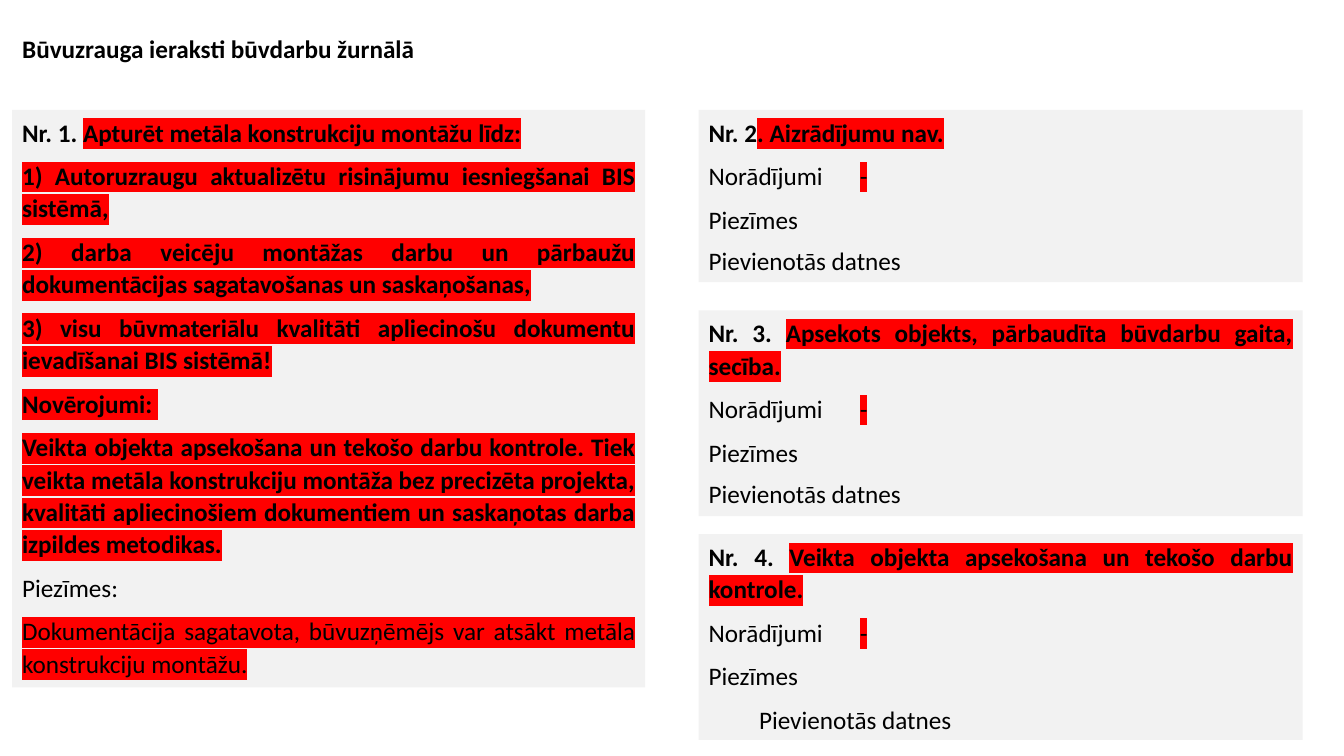
from dataclasses import dataclass

from lxml.etree import SubElement
from pptx import Presentation
from pptx.dml.color import RGBColor
from pptx.enum.shapes import MSO_SHAPE
from pptx.enum.text import MSO_ANCHOR, MSO_AUTO_SIZE, PP_ALIGN
from pptx.oxml.ns import qn
from pptx.slide import Slide
from pptx.text.text import TextFrame
from pptx.util import Inches, Pt


@dataclass(frozen=True)
class Theme:
    font: str = "Calibri"
    size: int = 18
    text: str = "000000"
    panel: str = "F2F2F2"
    marker: str = "FF0000"
    line_spacing: float = 1.07
    space_after: int = 8


@dataclass(frozen=True)
class Span:
    text: str
    bold: bool = False
    marked: bool = False


@dataclass(frozen=True)
class Line:
    spans: tuple[Span, ...]
    align: PP_ALIGN = PP_ALIGN.JUSTIFY
    spaced: bool = True
    indent: float = 0


@dataclass(frozen=True)
class Entry:
    left: float
    top: float
    width: float
    height: float
    lines: tuple[Line, ...]


THEME = Theme()
RIGHT_LEFT, RIGHT_WIDTH = 6.93, 5.99


def marked_line(text: str, bold: bool = True) -> Line:
    return Line((Span(text, bold, True),))


def heading(number: str, remark: str) -> Line:
    return Line((Span(number, True), Span(remark, True, True)))


def short_entry(top: float, height: float, number: str, remark: str,
                attachments: Line) -> Entry:
    """An entry in the right column, with no instructions given."""
    return Entry(RIGHT_LEFT, top, RIGHT_WIDTH, height, (
        heading(number, remark),
        Line((Span("Norādījumi\t"), Span("-", marked=True))),
        Line((Span("Piezīmes"),)),
        attachments,
    ))


ATTACHMENTS = (Span("Pievienotās datnes"),)
PLAIN_ATTACHMENTS = Line(ATTACHMENTS, PP_ALIGN.LEFT, spaced=False)
INDENTED_ATTACHMENTS = Line(ATTACHMENTS, PP_ALIGN.LEFT, indent=0.5)

ENTRIES = (
    Entry(0.12, 1.09, 6.28, 5.73, (
        heading("Nr. 1. ", "Apturēt metāla konstrukciju montāžu līdz:"),
        marked_line("1) Autoruzraugu aktualizētu risinājumu iesniegšanai BIS sistēmā,"),
        marked_line("2) darba veicēju montāžas darbu un pārbaužu dokumentācijas "
                    "sagatavošanas un saskaņošanas,"),
        marked_line("3) visu būvmateriālu kvalitāti apliecinošu dokumentu "
                    "ievadīšanai BIS sistēmā!"),
        marked_line("Novērojumi: "),
        marked_line("Veikta objekta apsekošana un tekošo darbu kontrole. Tiek veikta "
                    "metāla konstrukciju montāža bez precizēta projekta, kvalitāti "
                    "apliecinošiem dokumentiem un saskaņotas darba izpildes metodikas."),
        Line((Span("Piezīmes:"),)),
        marked_line("Dokumentācija sagatavota, būvuzņēmējs var atsākt metāla "
                    "konstrukciju montāžu.", bold=False),
    )),
    short_entry(1.09, 1.71, "Nr. 2", ". Aizrādījumu nav.", PLAIN_ATTACHMENTS),
    short_entry(3.08, 2.04, "Nr. 3. ",
                "Apsekots objekts, pārbaudīta būvdarbu gaita, secība.", PLAIN_ATTACHMENTS),
    short_entry(5.3, 2.04, "Nr. 4. ",
                "Veikta objekta apsekošana un tekošo darbu kontrole.", INDENTED_ATTACHMENTS),
)


def write_lines(frame: TextFrame, lines: tuple[Line, ...]) -> None:
    for index, line in enumerate(lines):
        paragraph = frame.add_paragraph() if index else frame.paragraphs[0]
        paragraph.alignment = line.align
        if line.spaced:
            paragraph.line_spacing = THEME.line_spacing
            paragraph.space_after = Pt(THEME.space_after)
        if line.indent:
            paragraph._p.get_or_add_pPr().set("marL", str(Inches(line.indent)))
        for span in line.spans:
            run = paragraph.add_run()
            run.text = span.text
            run.font.size = Pt(THEME.size)
            run.font.bold = span.bold
            run.font.color.rgb = RGBColor.from_string(THEME.text)
            if span.marked:
                highlight = SubElement(run.font._element, qn("a:highlight"))
                SubElement(highlight, qn("a:srgbClr"), val=THEME.marker)
            run.font.name = THEME.font


def add_title(slide: Slide, text: str) -> None:
    title = slide.shapes.title
    title.left, title.top = Inches(0.12), Inches(0.28)
    title.width, title.height = Inches(4.12), Inches(0.4)
    frame = title.text_frame
    frame.word_wrap = False
    frame.auto_size = MSO_AUTO_SIZE.SHAPE_TO_FIT_TEXT
    frame.vertical_anchor = MSO_ANCHOR.TOP
    write_lines(frame, (Line((Span(text, True),), PP_ALIGN.LEFT, spaced=False),))


def add_entry(slide: Slide, entry: Entry) -> None:
    panel = slide.shapes.add_shape(
        MSO_SHAPE.RECTANGLE, Inches(entry.left), Inches(entry.top),
        Inches(entry.width), Inches(entry.height))
    panel.shadow.inherit = False
    panel.fill.solid()
    panel.fill.fore_color.rgb = RGBColor.from_string(THEME.panel)
    panel.line.fill.background()
    frame = panel.text_frame
    frame.word_wrap = True
    frame.auto_size = MSO_AUTO_SIZE.SHAPE_TO_FIT_TEXT
    frame.vertical_anchor = MSO_ANCHOR.TOP
    write_lines(frame, entry.lines)


def main() -> None:
    presentation = Presentation()
    presentation.slide_width = Inches(13.33)
    presentation.slide_height = Inches(7.5)
    slide = presentation.slides.add_slide(presentation.slide_layouts.get_by_name("Title Only"))
    add_title(slide, "Būvuzrauga ieraksti būvdarbu žurnālā")
    for entry in ENTRIES:
        add_entry(slide, entry)
    presentation.save("out.pptx")


if __name__ == "__main__":
    main()
